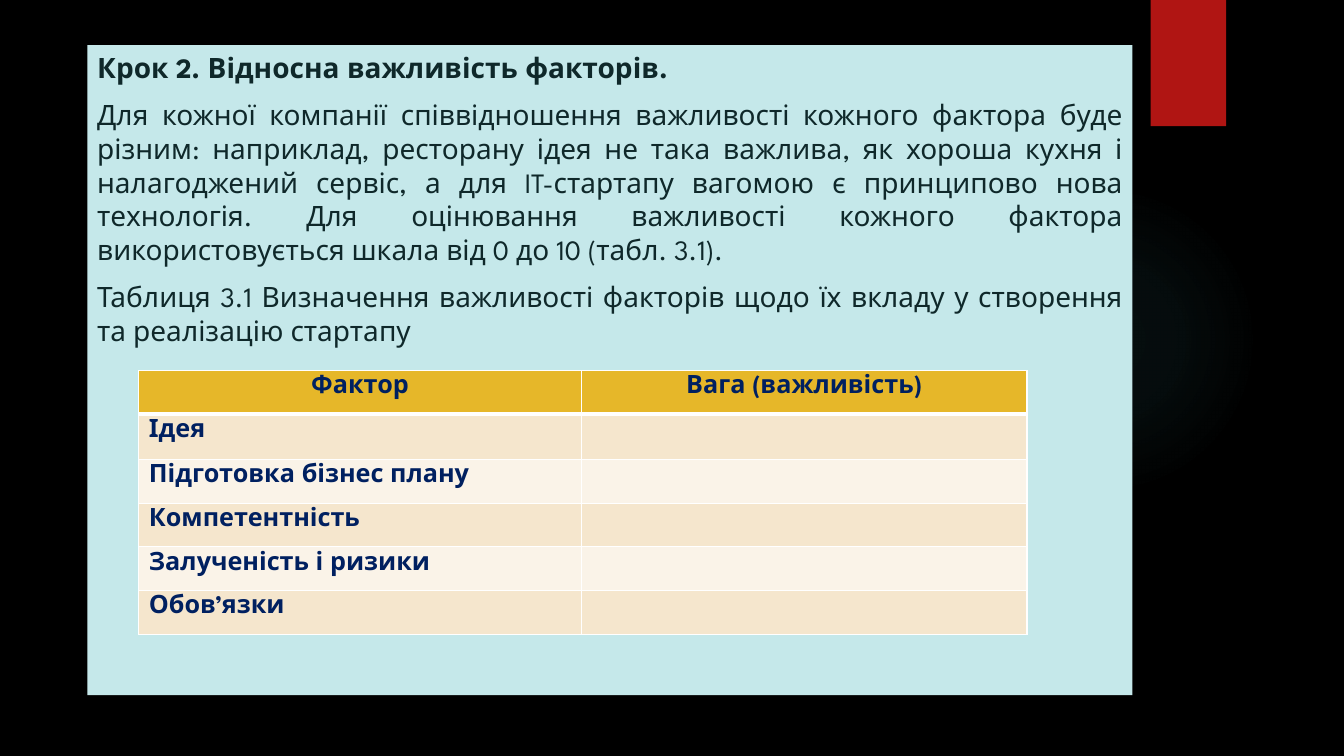
import pptx
import pptx.dml.color
import pptx.enum.shapes
import pptx.enum.text
import pptx.oxml
import pptx.oxml.ns
import pptx.util

Cm = pptx.util.Cm
Pt = pptx.util.Pt
RGB = pptx.dml.color.RGBColor
ALIGN = pptx.enum.text.PP_ALIGN
SHAPE = pptx.enum.shapes.MSO_SHAPE

BLACK = RGB(0x00, 0x00, 0x00)
WHITE = RGB(0xFF, 0xFF, 0xFF)
GLOW = RGB(0x50, 0xB9, 0xC1)
RED = RGB(0xB0, 0x15, 0x13)
PANEL = RGB(0xC5, 0xE8, 0xEA)
INK = RGB(0x0F, 0x28, 0x2A)
NAVY = RGB(0x00, 0x20, 0x60)
GOLD = RGB(0xE6, 0xB7, 0x29)
BANDS = (RGB(0xF5, 0xE6, 0xCD), RGB(0xFA, 0xF3, 0xE8))
FONT = "League Spartan"

STEP = "Крок 2. Відносна важливість факторів."
BODY = (
    "Для кожної компанії співвідношення важливості кожного фактора буде різним: "
    "наприклад, ресторану ідея не така важлива, як хороша кухня і налагоджений сервіс, "
    "а для IT-стартапу вагомою є принципово нова технологія. Для оцінювання важливості "
    "кожного фактора використовується шкала від 0 до 10 (табл. 3.1)."
)
CAPTION = ("Таблиця 3.1 Визначення важливості факторів щодо їх вкладу "
           "у створення та реалізацію стартапу")
HEADERS = ("Фактор", "Вага (важливість)")
FACTORS = ("Ідея", "Підготовка бізнес плану", "Компетентність",
           "Залученість і ризики", "Обов’язки")


def xml(body):
    """Parse one DrawingML element written with the a: prefix."""
    head, sep, tail = body.partition(">")
    return pptx.oxml.parse_xml(f"{head} {pptx.oxml.ns.nsdecls('a')}{sep}{tail}")


def write(p, text, size=18, color=INK, bold=False, align=ALIGN.LEFT, before=0):
    """Write formatted text into a paragraph."""
    p.alignment = align
    p.space_before = Pt(before)
    r = p.add_run()
    r.text = text
    r.font.name = FONT
    r.font.size = Pt(size)
    r.font.bold = bold
    r.font.color.rgb = color


def add_block(s, kind, box, color):
    """Add a plain filled shape without outline or shadow."""
    sp = s.shapes.add_shape(kind, *box)
    sp.shadow.inherit = False
    sp.fill.solid()
    sp.fill.fore_color.rgb = color
    sp.line.fill.background()
    return sp


def add_backdrop(s, glow_box, tab_box):
    """Draw the faint round glow and the red tab with its soft shadow."""
    glow = add_block(s, SHAPE.OVAL, glow_box, GLOW)
    stops = "".join(
        f'<a:gs pos="{pos}000"><a:srgbClr val="{GLOW}"><a:alpha val="{alpha}000"/>'
        "</a:srgbClr></a:gs>"
        for pos, alpha in ((0, 7), (36, 6), (69, 0))
    )
    solid = glow._element.spPr.find(pptx.oxml.ns.qn("a:solidFill"))
    solid.getparent().replace(solid, xml(
        f'<a:gradFill><a:gsLst>{stops}</a:gsLst><a:path path="circle">'
        '<a:fillToRect l="50000" t="50000" r="50000" b="50000"/></a:path></a:gradFill>'
    ))
    tab = add_block(s, SHAPE.RECTANGLE, tab_box, RED)
    effects = tab._element.spPr.find(pptx.oxml.ns.qn("a:effectLst"))
    effects.append(xml(
        f'<a:outerShdw blurRad="{Pt(3)}" dist="{Pt(2)}" dir="5400000">'
        f'<a:srgbClr val="{BLACK}"><a:alpha val="45000"/></a:srgbClr></a:outerShdw>'
    ))


def add_panel(s, box):
    """Draw the pale panel with the step heading, text and table caption."""
    tf = add_block(s, SHAPE.RECTANGLE, box, PANEL).text_frame
    tf.word_wrap = True
    tf.vertical_anchor = pptx.enum.text.MSO_ANCHOR.TOP
    for i, text in enumerate((STEP, BODY, CAPTION)):
        p = tf.add_paragraph() if i else tf.paragraphs[0]
        write(p, text, size=20, bold=i == 0, align=ALIGN.JUSTIFY, before=10 if i else 0)


def format_cell(cell, fill, top, bottom):
    """Set the fill, margins and white borders of a table cell."""
    cell.fill.solid()
    cell.fill.fore_color.rgb = fill
    cell.margin_top, cell.margin_bottom = Cm(0.14), 0
    tcPr = cell._tc.get_or_add_tcPr()
    for i, (side, width) in enumerate((("L", 1), ("R", 1), ("T", top), ("B", bottom))):
        tcPr.insert(i, xml(
            f'<a:ln{side} w="{Pt(width)}"><a:solidFill><a:srgbClr val="{WHITE}"/>'
            f"</a:solidFill></a:ln{side}>"
        ))


def add_factor_table(s, left, top):
    """Draw the table of factors and their weights."""
    widths = (Cm(11.15), Cm(11.23))
    heights = [Cm(1.1), Cm(1.14)] + [Cm(1.1)] * 4
    rows = [HEADERS] + [(factor, "") for factor in FACTORS]
    table = s.shapes.add_table(
        len(rows), len(widths), left, top, sum(widths), sum(heights)).table
    for col, width in zip(table.columns, widths):
        col.width = width
    for i, texts in enumerate(rows):
        table.rows[i].height = heights[i]
        for j, text in enumerate(texts):
            cell = table.cell(i, j)
            format_cell(cell, BANDS[(i - 1) % 2] if i else GOLD,
                        top=3 if i == 1 else 1, bottom=1 if i else 3)
            if text:
                write(cell.text_frame.paragraphs[0], text, color=NAVY, bold=True,
                      align=ALIGN.LEFT if i else ALIGN.CENTER)


def main():
    """Build the slide and save it."""
    prs = pptx.Presentation()
    prs.slide_width, prs.slide_height = Cm(33.87), Cm(19.05)
    s = prs.slides.add_slide(prs.slide_layouts[6])
    s.background.fill.solid()
    s.background.fill.fore_color.rgb = BLACK
    add_backdrop(s, (Cm(23.9), Cm(4.65), Cm(7.82), Cm(7.82)),
                 (Cm(29), 0, Cm(1.9), Cm(3.18)))
    add_panel(s, (Cm(2.2), Cm(1.14), Cm(26.34), Cm(16.38)))
    add_factor_table(s, Cm(3.5), Cm(9.34))
    prs.save("out.pptx")


if __name__ == "__main__":
    main()
